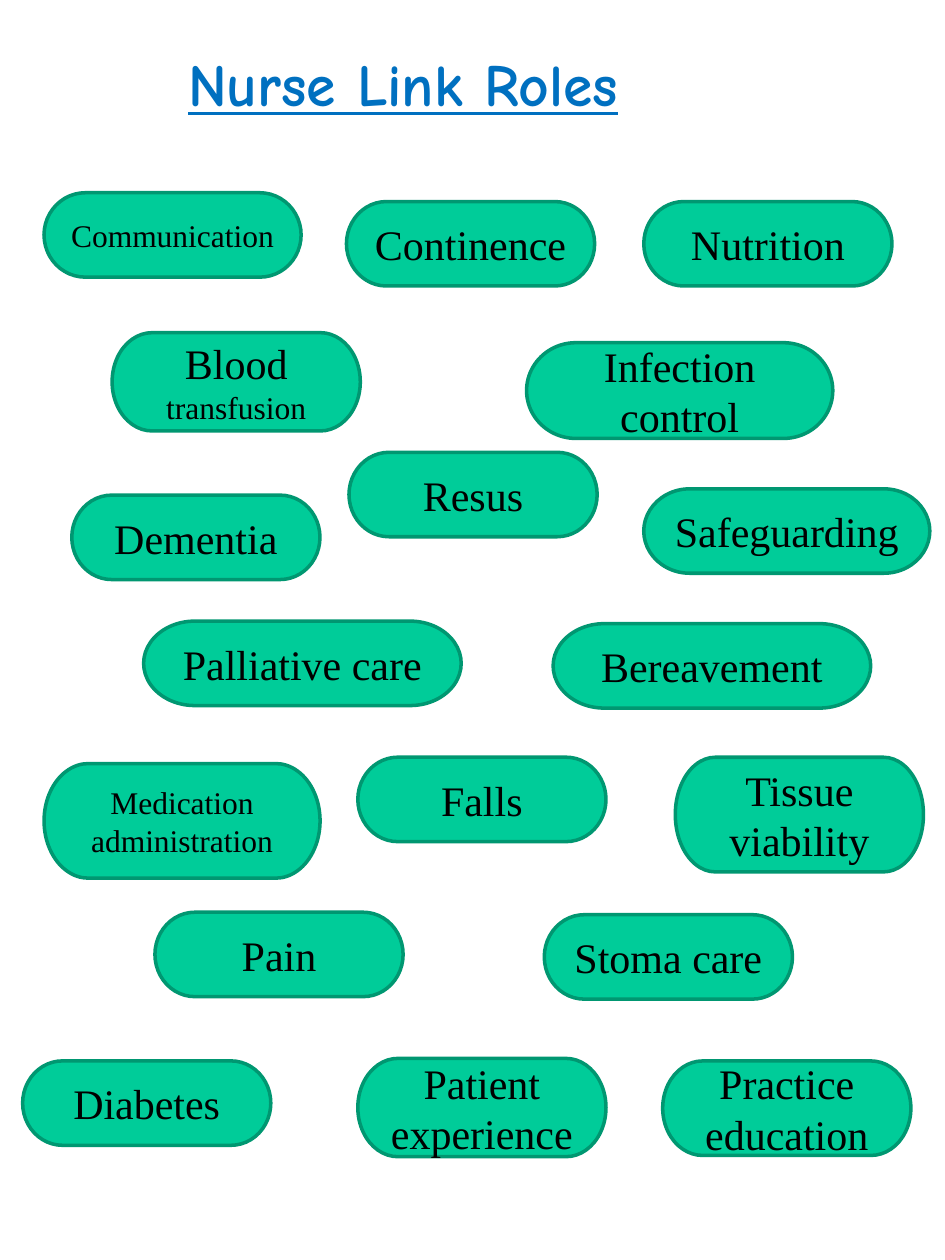
import dataclasses

import pptx
import pptx.dml.color
import pptx.enum.shapes
import pptx.enum.text
import pptx.util

Inches = pptx.util.Inches
Pt = pptx.util.Pt
Color = pptx.dml.color.RGBColor.from_string


@dataclasses.dataclass(frozen=True)
class Theme:
    title_font: str = "Comic Neue"
    role_font: str = "Times New Roman"
    title_color: str = "0070C0"
    role_color: str = "000000"
    fill: str = "00CC99"
    outline: str = "009771"
    title_size: int = 34
    large: int = 24
    small: int = 18
    outline_width: int = 2


THEME = Theme()
TITLE_BOX = (0.6, 0.32, 5.2, 0.67)
WIDTH, HEIGHT = 1.97, 0.67

# Left, top, width, height, then the (text, size) runs of each role
ROLES = [
    (0.35, 1.53, 2.04, HEIGHT, [("Communication", THEME.small)]),
    (2.75, 1.6, WIDTH, HEIGHT, [("Continence", THEME.large)]),
    (5.11, 1.6, WIDTH, HEIGHT, [("Nutrition", THEME.large)]),
    (0.89, 2.64, WIDTH, 0.78, [("Blood ", THEME.large), ("transfusion", THEME.small)]),
    (4.18, 2.72, 2.43, 0.76, [("Infection control", THEME.large)]),
    (0.57, 3.93, WIDTH, HEIGHT, [("Dementia", THEME.large)]),
    (2.77, 3.59, WIDTH, HEIGHT, [("Resus", THEME.large)]),
    (5.11, 3.88, 2.27, HEIGHT, [("Safeguarding", THEME.large)]),
    (1.14, 4.93, 2.52, HEIGHT, [("Palliative care", THEME.large)]),
    (4.39, 4.95, 2.52, HEIGHT, [("Bereavement", THEME.large)]),
    (0.35, 6.06, 2.19, 0.91, [("Medication administration", THEME.small)]),
    (2.84, 6.01, WIDTH, HEIGHT, [("Falls", THEME.large)]),
    (5.36, 6.01, WIDTH, 0.91, [("Tissue viability", THEME.large)]),
    (1.23, 7.24, WIDTH, HEIGHT, [("Pain", THEME.large)]),
    (4.32, 7.26, WIDTH, HEIGHT, [("Stoma care", THEME.large)]),
    (0.18, 8.42, WIDTH, HEIGHT, [("Diabetes", THEME.large)]),
    (2.84, 8.4, WIDTH, 0.78, [("Patient experience", THEME.large)]),
    (5.26, 8.42, WIDTH, 0.75, [("Practice education", THEME.large)]),
]


def set_attributes(target, values):
    for name, value in values.items():
        setattr(target, name, value)


def write_text(shape, runs, anchor, color, font_format):
    """Fill the shape with one centred paragraph of (text, size) runs."""
    set_attributes(shape.text_frame, {
        "word_wrap": True,
        "auto_size": pptx.enum.text.MSO_AUTO_SIZE.NONE,
        "vertical_anchor": anchor,
    })
    paragraph = shape.text_frame.paragraphs[0]
    paragraph.alignment = pptx.enum.text.PP_ALIGN.CENTER
    for text, size in runs:
        run = paragraph.add_run()
        run.text = text
        set_attributes(run.font, {"size": Pt(size), **font_format})
        run.font.color.rgb = Color(color)


def place_title(slide, box):
    title = slide.shapes.title
    set_attributes(title, dict(zip(("left", "top", "width", "height"), map(Inches, box))))
    write_text(title, [("Nurse Link Roles", THEME.title_size)],
               pptx.enum.text.MSO_ANCHOR.TOP, THEME.title_color,
               {"name": THEME.title_font, "bold": True, "underline": True})


def place_role(slide, box, runs):
    shape = slide.shapes.add_shape(
        pptx.enum.shapes.MSO_SHAPE.FLOWCHART_TERMINATOR, *map(Inches, box))
    shape.shadow.inherit = False
    shape.fill.solid()
    shape.fill.fore_color.rgb = Color(THEME.fill)
    shape.line.color.rgb = Color(THEME.outline)
    shape.line.width = Pt(THEME.outline_width)
    write_text(shape, runs, pptx.enum.text.MSO_ANCHOR.MIDDLE, THEME.role_color,
               {"name": THEME.role_font})


def main():
    presentation = pptx.Presentation()
    set_attributes(presentation, {"slide_width": Inches(7.5), "slide_height": Inches(10)})
    title_only = presentation.slide_layouts.get_by_name("Title Only")
    slide = presentation.slides.add_slide(title_only)
    place_title(slide, TITLE_BOX)
    for *box, runs in ROLES:
        place_role(slide, box, runs)
    presentation.save("out.pptx")


if __name__ == "__main__":
    main()
